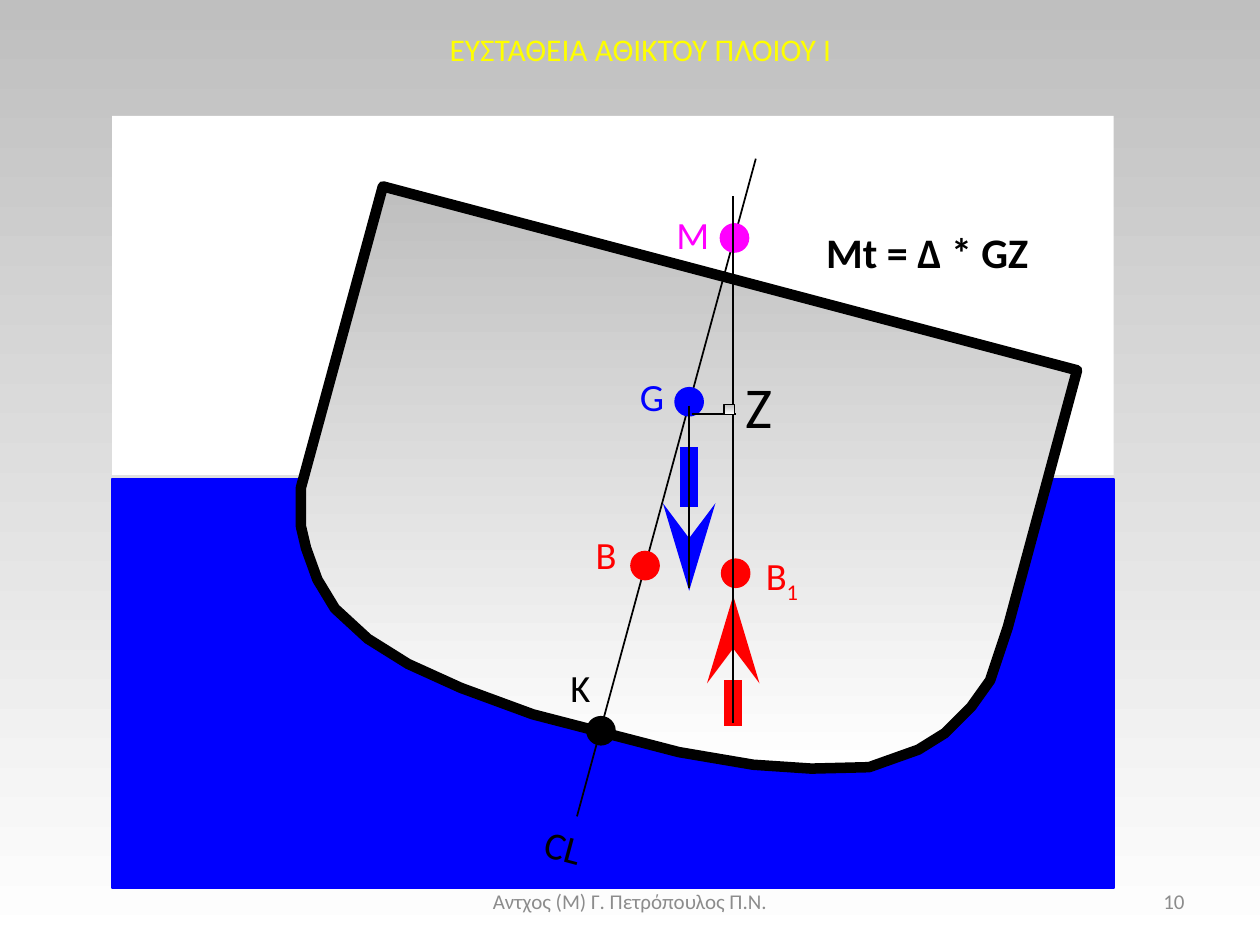
from lxml import etree
from pptx import Presentation
from pptx.dml.color import RGBColor
from pptx.enum.shapes import MSO_CONNECTOR, MSO_SHAPE
from pptx.enum.text import MSO_ANCHOR, PP_ALIGN
from pptx.oxml.ns import qn
from pptx.util import Pt

STRAIGHT = MSO_CONNECTOR.STRAIGHT
RECTANGLE, OVAL = MSO_SHAPE.RECTANGLE, MSO_SHAPE.OVAL
TOP, MIDDLE = MSO_ANCHOR.TOP, MSO_ANCHOR.MIDDLE
LEFT, CENTER, RIGHT = PP_ALIGN.LEFT, PP_ALIGN.CENTER, PP_ALIGN.RIGHT

COLORS = {
    "black": "000000", "white": "FFFFFF", "silver": "BFBFBF", "footer": "8C8C8C",
    "yellow": "FFFF00", "blue": "0000FF", "red": "FF0000", "magenta": "FF00FF",
}
FONT = "Calibri"
TILT = 15
DOT = 16

# Hull outline, in points from the corner of the diagram
HULL = [
    (154.8, 40.3), (108, 212.4), (108, 234.7), (110.9, 247), (117.4, 265),
    (127.4, 281.5), (146.2, 298.8), (169.2, 313.2), (199.4, 326.9), (240.5, 342),
    (324, 363.6), (366.5, 370.8), (399.6, 373), (432.7, 372.2), (460.8, 362.2),
    (475.9, 352.8), (491, 337.7), (501.8, 322.6), (508.3, 303.1), (511.9, 292.3),
    (551.5, 145.4),
]
# Name, subscript, colour, centre of the dot, box of the label
MARKS = [
    ("K", "", "black", (279.4, 351.4), (254.9, 314.6, 27.4, 27.4)),
    ("B", "", "red", (304.6, 257), (269.3, 239, 27.4, 27.4)),
    ("G", "", "blue", (329.8, 163.4), (294.5, 148.3, 29.5, 27.4)),
    ("M", "", "magenta", (355.7, 69.8), (315.4, 56.2, 31, 27.4)),
    ("B", "1", "red", (356.4, 261.4), (366.5, 249.8, 35.3, 27.4)),
]
WEIGHT_X, BUOYANCY_X = 329.8, 355


def rgb(name):
    return RGBColor.from_string(COLORS[name])


def shade(fill):
    """Vertical gradient, silver at the top and white at the bottom."""
    fill.gradient()
    fill.gradient_angle = 270
    for stop, position, name in zip(fill.gradient_stops, (0, 1), ("silver", "white")):
        stop.position = position
        stop.color.rgb = rgb(name)


def paint(shape, fill=None, line=None, width=1):
    shape.shadow.inherit = False
    if fill:
        shape.fill.solid()
        shape.fill.fore_color.rgb = rgb(fill)
    else:
        shade(shape.fill)
    if line:
        shape.line.color.rgb = rgb(line)
        shape.line.width = Pt(width)
    else:
        shape.line.fill.background()


def add_preset(slide, kind, box, fill=None, line=None):
    shape = slide.shapes.add_shape(kind, *map(Pt, box))
    paint(shape, fill, line)
    return shape


def add_text(slide, box, text, size, color, align=LEFT, anchor=MIDDLE,
             wrap=False, bold=False, spacing=None, subscript=""):
    shape = slide.shapes.add_textbox(*map(Pt, box))
    frame = shape.text_frame
    frame.word_wrap = wrap
    frame.vertical_anchor = anchor
    paragraph = frame.paragraphs[0]
    paragraph.alignment = align
    if spacing:
        paragraph.line_spacing = spacing
    paragraph.font.name = FONT
    paragraph.font.size = Pt(size)
    paragraph.font.bold = bold
    paragraph.font.color.rgb = rgb(color)
    paragraph.add_run().text = text
    if subscript:
        run = paragraph.add_run()
        run.text = subscript
        run._r.get_or_add_rPr().set("baseline", "-25000")
    return shape


def add_line(slide, start, end, color="black", width=1, arrow=False):
    line = slide.shapes.add_connector(STRAIGHT, *map(Pt, (*start, *end)))
    line.line.color.rgb = rgb(color)
    line.line.width = Pt(width)
    if arrow:
        etree.SubElement(line.line._get_or_add_ln(), qn("a:tailEnd"),
                         type="stealth", w="med", len="lg")
    etree.SubElement(line._element.spPr, qn("a:effectLst"))


def add_hull(slide, left, top):
    points = [(Pt(left + x), Pt(top + y)) for x, y in HULL]
    builder = slide.shapes.build_freeform(*points[0], scale=1.0)
    builder.add_line_segments(points[1:], close=True)
    paint(builder.convert_to_shape(), line="black", width=6)


def add_diagram(slide, left, top, width, height):
    """Heeled ship afloat, with its centres, forces and righting arm."""
    def at(x, y, *size):
        return (left + x, top + y, *size)

    def label(box, text, size, color, subscript=""):
        return add_text(slide, at(*box), text, size, color,
                        spacing=0.85, subscript=subscript)

    # Sky, sea and hull
    waterline = 207.4
    add_preset(slide, RECTANGLE, at(0, 0, width, waterline - 2.2), "white")
    add_preset(slide, RECTANGLE, at(0, waterline, width, height - waterline), "blue", "blue")
    label((239.8, 406.1, 39.6, 27.4), "CL", 22, "black").rotation = TILT
    add_hull(slide, left, top)

    # Centre line, then the marked points
    add_line(slide, at(367.9, 24.5), at(265.7, 400.3))
    for name, subscript, color, (x, y), box in MARKS:
        dot = add_preset(slide, OVAL, at(x - DOT / 2, y - DOT / 2, DOT, DOT), color, color)
        dot.rotation = TILT
        label(box, name, 22, color, subscript)

    # Buoyancy and weight, each over its line of action
    add_line(slide, at(BUOYANCY_X, 348.5), at(BUOYANCY_X, 274.3), "red", 10, True)
    add_line(slide, at(BUOYANCY_X, 347), at(BUOYANCY_X, 46.1))
    add_line(slide, at(WEIGHT_X, 189.4), at(WEIGHT_X, 271.4), "blue", 10, True)
    add_line(slide, at(WEIGHT_X, 165.6), at(WEIGHT_X, 270))

    # Righting arm with its right angle
    add_line(slide, at(331.2, 170.6), at(356.4, 170.6))
    add_preset(slide, RECTANGLE, at(349.9, 164.9, 5.8, 5.8), line="black")
    label((355, 149, 31, 39.6), "Z", 33, "black")

    # Righting moment
    add_text(slide, at(401, 59.8, 136.8, 36), "Mt = Δ * GZ", 24, "black",
             anchor=TOP, bold=True)


def add_title(slide, box):
    add_text(slide, box, "ΕΥΣΤΑΘΕΙΑ ΑΘΙΚΤΟΥ ΠΛΟΙΟΥ I", 18, "yellow", CENTER, wrap=True)


def add_footer(slide, left, top, width, height):
    add_text(slide, (left, top, 228, height), "Αντχος (Μ) Γ. Πετρόπουλος Π.Ν.",
             12, "footer", CENTER, wrap=True)
    add_text(slide, (left + width - 168, top, 168, height), "10",
             12, "footer", RIGHT, wrap=True)


def main():
    presentation = Presentation()
    presentation.slide_width, presentation.slide_height = Pt(720), Pt(540)
    slide = presentation.slides.add_slide(presentation.slide_layouts[6])
    shade(slide.background.fill)
    add_footer(slide, 246, 500.5, 438, 28.8)
    add_title(slide, (60, 13.5, 612, 29))
    add_diagram(slide, 64, 66.2, 572.4, 441.4)
    presentation.save("out.pptx")


if __name__ == "__main__":
    main()
